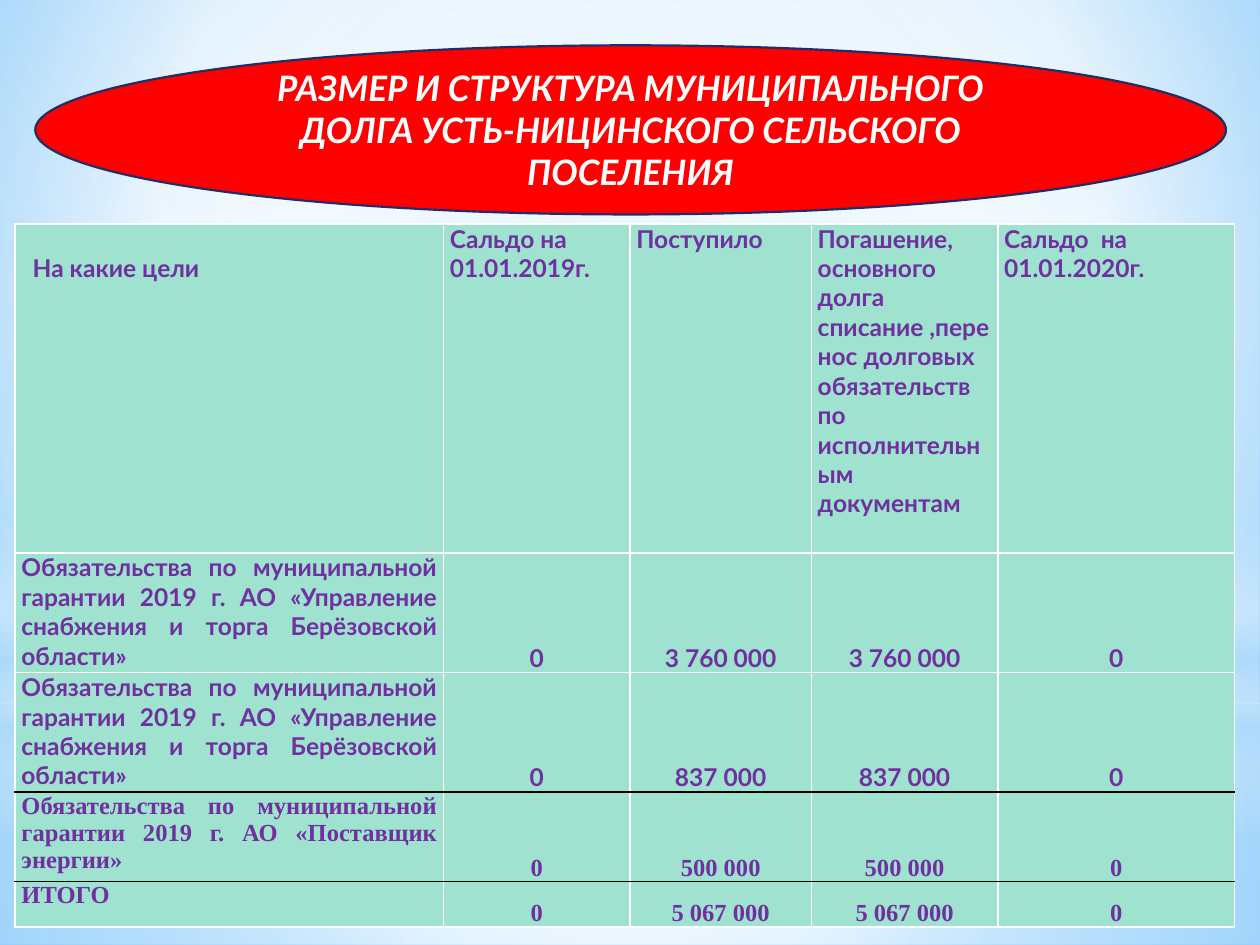
from dataclasses import dataclass
from typing import NamedTuple, Optional

from lxml.etree import SubElement
from pptx import Presentation
from pptx.dml.color import RGBColor
from pptx.enum.shapes import MSO_SHAPE
from pptx.enum.text import MSO_ANCHOR, PP_ALIGN
from pptx.oxml.ns import qn
from pptx.util import Inches, Pt

WIDE, HIGH = Inches(10), Inches(7.5)


@dataclass(frozen=True)
class Theme:
    white: str = "FFFFFF"
    black: str = "000000"
    sky: str = "B4DCFA"
    red: str = "FF0000"
    navy: str = "1F2E69"
    mint: str = "9EE2CF"
    plum: str = "7030A0"
    sans: str = "Lato"
    serif: str = "Times New Roman"
    title: int = 20
    body: int = 14


class Box(NamedTuple):
    """Left, top, width and height as shares of the slide."""
    left: float
    top: float
    width: float
    height: float


class Stop(NamedTuple):
    place: int
    color: str
    alpha: int = 100


class Glow(NamedTuple):
    """A gradient: radial about the focus, or vertical without one."""
    stops: list[Stop]
    focus: Optional[tuple[int, int, int, int]] = (50, 50, 50, 50)


class Layer(NamedTuple):
    kind: MSO_SHAPE
    box: Box
    glow: Glow


class Row(NamedTuple):
    goal: str
    sums: list[str]
    height: float
    font: str
    above: str
    below: str


THEME = Theme()
W, S = THEME.white, THEME.sky

BACK = Glow([Stop(0, "9ED5FF"), Stop(60, W), Stop(100, "5BB9FF")], (20, 10, 20, 60))
LAYERS = [
    Layer(MSO_SHAPE.RECTANGLE, Box(0, 0.744, 1, 0.256),
          Glow([Stop(0, W, 91), Stop(37, W, 76), Stop(100, S, 79)])),
    Layer(MSO_SHAPE.RECTANGLE, Box(0, 0, 1, 0.744),
          Glow([Stop(0, W, 89), Stop(48, W, 62), Stop(100, S, 79)])),
    Layer(MSO_SHAPE.RECTANGLE, Box(0, 0.55, 1, 0.333),
          Glow([Stop(0, W, 0), Stop(29, W, 30), Stop(45, S, 40),
                Stop(55, W, 26), Stop(65, S, 60), Stop(100, W, 0)], None)),
    Layer(MSO_SHAPE.OVAL, Box(0, 0.233, 1, 0.744),
          Glow([Stop(0, W), Stop(56, W, 0)])),
]

TITLE = "РАЗМЕР И СТРУКТУРА МУНИЦИПАЛЬНОГО ДОЛГА УСТЬ-НИЦИНСКОГО СЕЛЬСКОГО ПОСЕЛЕНИЯ"
HEADS = [
    "На какие цели",
    "Сальдо на\n01.01.2019г.",
    "Поступило",
    "Погашение, основного долга списание ,перенос долговых обязательств "
    "по исполнительным документам",
    "Сальдо  на\n01.01.2020г.",
]
DEBT = "Обязательства по муниципальной гарантии 2019 г. АО "
SUPPLY = DEBT + "«Управление снабжения и торга Берёзовской области»"
POWER = DEBT + "«Поставщик энергии»"
COLS = [3.4, 1.48, 1.44, 1.48, 1.88]
HEAD_HIGH = 2.61
ROWS = [
    Row(SUPPLY, ["0", "3 760 000", "3 760 000", "0"], 0.95, THEME.sans, W, W),
    Row(SUPPLY, ["0", "837 000", "837 000", "0"], 0.95, THEME.sans, W, THEME.black),
    Row(POWER, ["0", "500 000", "500 000", "0"], 0.71, THEME.serif, THEME.black, THEME.black),
    Row("ИТОГО", ["0", "5 067 000", "5 067 000", "0"], 0.36, THEME.serif, THEME.black, W),
]


def tint(fill, color: str) -> None:
    fill.solid()
    fill.fore_color.rgb = RGBColor.from_string(color)


def shade(fill, root, glow: Glow) -> None:
    """Give the fill found under root the stops and focus of the glow."""
    fill.gradient()
    grad = root.find(".//" + qn("a:gradFill"))
    for child in list(grad):
        grad.remove(child)
    stops = SubElement(grad, qn("a:gsLst"))
    for stop in glow.stops:
        mark = SubElement(stops, qn("a:gs"), pos=str(stop.place * 1000))
        color = SubElement(mark, qn("a:srgbClr"), val=stop.color)
        SubElement(color, qn("a:alpha"), val=str(stop.alpha * 1000))
    if glow.focus is None:
        SubElement(grad, qn("a:lin"), ang="5400000", scaled="0")
    else:
        way = SubElement(grad, qn("a:path"), path="circle")
        sides = {side: str(share * 1000) for side, share in zip("ltrb", glow.focus)}
        SubElement(way, qn("a:fillToRect"), **sides)


def place(box: Box) -> list[int]:
    return [round(share * size) for share, size in zip(box, (WIDE, HIGH) * 2)]


def style(frame, align: PP_ALIGN, font: str, size: int, color: str,
          slant: bool = False) -> None:
    frame.word_wrap = True
    for para in frame.paragraphs:
        para.alignment = align
        for run in para.runs:
            run.font.name = font
            run.font.size = Pt(size)
            run.font.bold = True
            run.font.italic = slant
            run.font.color.rgb = RGBColor.from_string(color)


def edge(cell, above: str, below: str) -> None:
    """Draw the four borders of a cell; the sides are white."""
    props = cell._tc.get_or_add_tcPr()
    for spot, (side, color) in enumerate(zip("LRTB", (W, W, above, below))):
        line = SubElement(props, qn("a:ln" + side), w=str(Pt(1)))
        SubElement(SubElement(line, qn("a:solidFill")), qn("a:srgbClr"), val=color)
        props.insert(spot, line)


def write(cell, text: str, align: PP_ALIGN, font: str, above: str, below: str) -> None:
    cell.margin_left = cell.margin_right = Inches(0.05)
    cell.margin_top = cell.margin_bottom = 0
    cell.text_frame.text = text
    style(cell.text_frame, align, font, THEME.body, THEME.plum)
    tint(cell.fill, THEME.mint)
    edge(cell, above, below)


def add_layer(slide, layer: Layer) -> None:
    shape = slide.shapes.add_shape(layer.kind, *place(layer.box))
    shape.shadow.inherit = False
    shape.line.fill.background()
    shade(shape.fill, shape.element, layer.glow)


def add_debts(slide) -> None:
    box = Box(0.012, 0.237, 0.968, 0.745)
    table = slide.shapes.add_table(len(ROWS) + 1, len(COLS), *place(box)).table
    for col, width in zip(table.columns, COLS):
        col.width = Inches(width)
    heights = [HEAD_HIGH] + [row.height for row in ROWS]
    for line, height in zip(table.rows, heights):
        line.height = Inches(height)

    for col, head in enumerate(HEADS):
        write(table.cell(0, col), head, PP_ALIGN.LEFT, THEME.sans, W, W)
    first = table.cell(0, 0)
    first.margin_top, first.margin_left = Inches(0.23), Inches(0.14)

    for num, row in enumerate(ROWS, 1):
        look = (row.font, row.above, row.below)
        write(table.cell(num, 0), row.goal, PP_ALIGN.JUSTIFY, *look)
        for col, value in enumerate(row.sums, 1):
            cell = table.cell(num, col)
            write(cell, value, PP_ALIGN.CENTER, *look)
            cell.vertical_anchor = MSO_ANCHOR.BOTTOM


def add_title(slide) -> None:
    shape = slide.shapes.add_shape(MSO_SHAPE.OVAL, *place(Box(0.028, 0.048, 0.945, 0.179)))
    shape.shadow.inherit = False
    tint(shape.fill, THEME.red)
    tint(shape.line.fill, THEME.navy)
    shape.line.width = Pt(1.25)
    shape.text_frame.text = TITLE
    shape.text_frame.vertical_anchor = MSO_ANCHOR.MIDDLE
    style(shape.text_frame, PP_ALIGN.CENTER, THEME.sans, THEME.title, W, slant=True)


def main() -> None:
    deck = Presentation()
    deck.slide_width, deck.slide_height = WIDE, HIGH
    slide = deck.slides.add_slide(deck.slide_layouts[6])
    shade(slide.background.fill, slide.element, BACK)
    for layer in LAYERS:
        add_layer(slide, layer)
    add_debts(slide)
    add_title(slide)
    deck.save("out.pptx")


if __name__ == "__main__":
    main()
